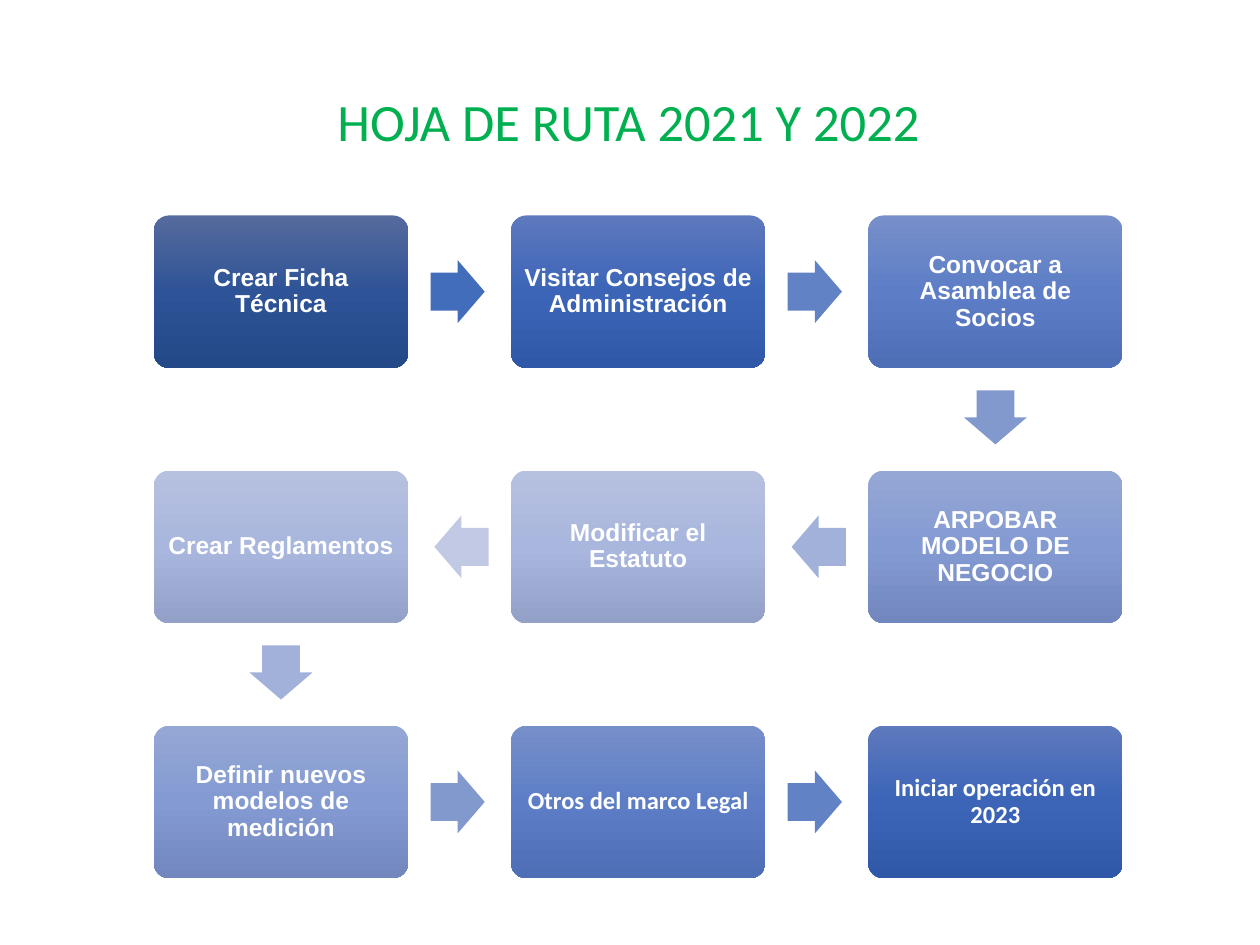
from copy import deepcopy
from math import atan2, cos, degrees, sin

from pptx import Presentation
from pptx.dml.color import RGBColor
from pptx.enum.shapes import MSO_SHAPE
from pptx.enum.text import MSO_ANCHOR, PP_ALIGN
from pptx.util import Inches, Pt

TITLE = "HOJA DE RUTA 2021 Y 2022"
# text, font, tone of the card
STEPS = [
    ("Crear Ficha Técnica", "Arial", "navy"),
    ("Visitar Consejos de Administración", "Arial", "royal"),
    ("Convocar a Asamblea de Socios", "Arial", "mid"),
    ("ARPOBAR MODELO DE NEGOCIO", "Arial", "soft"),
    ("Modificar el Estatuto", "Arial", "pale"),
    ("Crear Reglamentos", "Arial", "pale"),
    ("Definir nuevos modelos de medición", "Arial", "soft"),
    ("Otros del marco Legal", "Calibri", "mid"),
    ("Iniciar operación en 2023", "Calibri", "royal"),
]
# colour of the arrow after each step but the last
ARROWS = ["416DBB", "6182C5", "8299CE", "A2B1D9", "C1C9E4", "A2B1D9", "8299CE", "6182C5"]
TONES = {
    "navy": ("566B9E", "2E5396", "244989"),
    "royal": ("5E79BD", "3C65B8", "3058A9"),
    "mid": ("778FC9", "5D7EC7", "4E6EB6"),
    "soft": ("95A7D4", "849AD2", "7187BE"),
    "pale": ("B6C1E0", "A9B6DD", "93A0C8"),
}
COLORS = {"title": "00B050", "text": "FFFFFF"}

COLS = 3
LEFT, TOP = 1.22, 1.71
CARD_W, CARD_H = 2.02, 1.21
STEP_X, STEP_Y = 2.835, 2.025
ARROW_W, ARROW_H = 0.43, 0.5
NUDGE = 0.015


def write(frame, text, font, size, color, bold):
    frame.text = text
    frame.word_wrap = True
    frame.vertical_anchor = MSO_ANCHOR.MIDDLE
    para = frame.paragraphs[0]
    para.alignment = PP_ALIGN.CENTER
    para.line_spacing = 0.9
    run = para.runs[0]
    for key, value in {"name": font, "size": Pt(size), "bold": bold}.items():
        setattr(run.font, key, value)
    run.font.color.rgb = RGBColor.from_string(color)


def add_shape(slide, kind, center, width, height):
    """Add a plain shape around its center, without line or shadow."""
    x, y = center
    shape = slide.shapes.add_shape(
        kind, Inches(x - width / 2), Inches(y - height / 2), Inches(width), Inches(height)
    )
    shape.shadow.inherit = False
    shape.line.fill.background()
    return shape


def shade(shape, tones):
    """Fill from top to bottom with three evenly spaced tones."""
    fill = shape.fill
    fill.gradient()
    fill.gradient_angle = 270
    stops = shape._element.xpath(".//a:gsLst")[0]
    stops.append(deepcopy(stops[-1]))
    for i, (stop, tone) in enumerate(zip(fill.gradient_stops, tones)):
        stop.position = i / 2
        stop.color.rgb = RGBColor.from_string(tone)


def place(i):
    """Center of step i on a path that turns back at each row end."""
    row, col = divmod(i, COLS)
    if row % 2:
        col = COLS - 1 - col
    return LEFT + CARD_W / 2 + col * STEP_X, TOP + CARD_H / 2 + row * STEP_Y


def add_card(slide, center, text, font, tone):
    card = add_shape(slide, MSO_SHAPE.ROUNDED_RECTANGLE, center, CARD_W, CARD_H)
    card.adjustments[0] = 0.1
    shade(card, TONES[tone])
    frame = card.text_frame
    for side in ("left", "right", "top", "bottom"):
        setattr(frame, f"margin_{side}", Inches(0.06))
    write(frame, text, font, 14, COLORS["text"], True)


def add_arrow(slide, start, end, color):
    angle = atan2(end[1] - start[1], end[0] - start[0])
    x = (start[0] + end[0]) / 2 - NUDGE * cos(angle)
    y = (start[1] + end[1]) / 2 - NUDGE * sin(angle)
    arrow = add_shape(slide, MSO_SHAPE.RIGHT_ARROW, (x, y), ARROW_W, ARROW_H)
    arrow.adjustments[0] = 0.6
    arrow.adjustments[1] = 0.5
    arrow.rotation = degrees(angle)
    arrow.fill.solid()
    arrow.fill.fore_color.rgb = RGBColor.from_string(color)


def main():
    deck = Presentation()
    deck.slide_width, deck.slide_height = Inches(10), Inches(7.5)
    slide = deck.slides.add_slide(deck.slide_layouts[5])

    title = slide.shapes.title
    box = {"left": 0.68, "top": 0.52, "width": 8.62, "height": 0.93}
    for key, value in box.items():
        setattr(title, key, Inches(value))
    write(title.text_frame, TITLE, "Calibri", 30, COLORS["title"], False)

    for i, step in enumerate(STEPS):
        add_card(slide, place(i), *step)
    for i, color in enumerate(ARROWS):
        add_arrow(slide, place(i), place(i + 1), color)

    deck.save("out.pptx")


if __name__ == "__main__":
    main()
